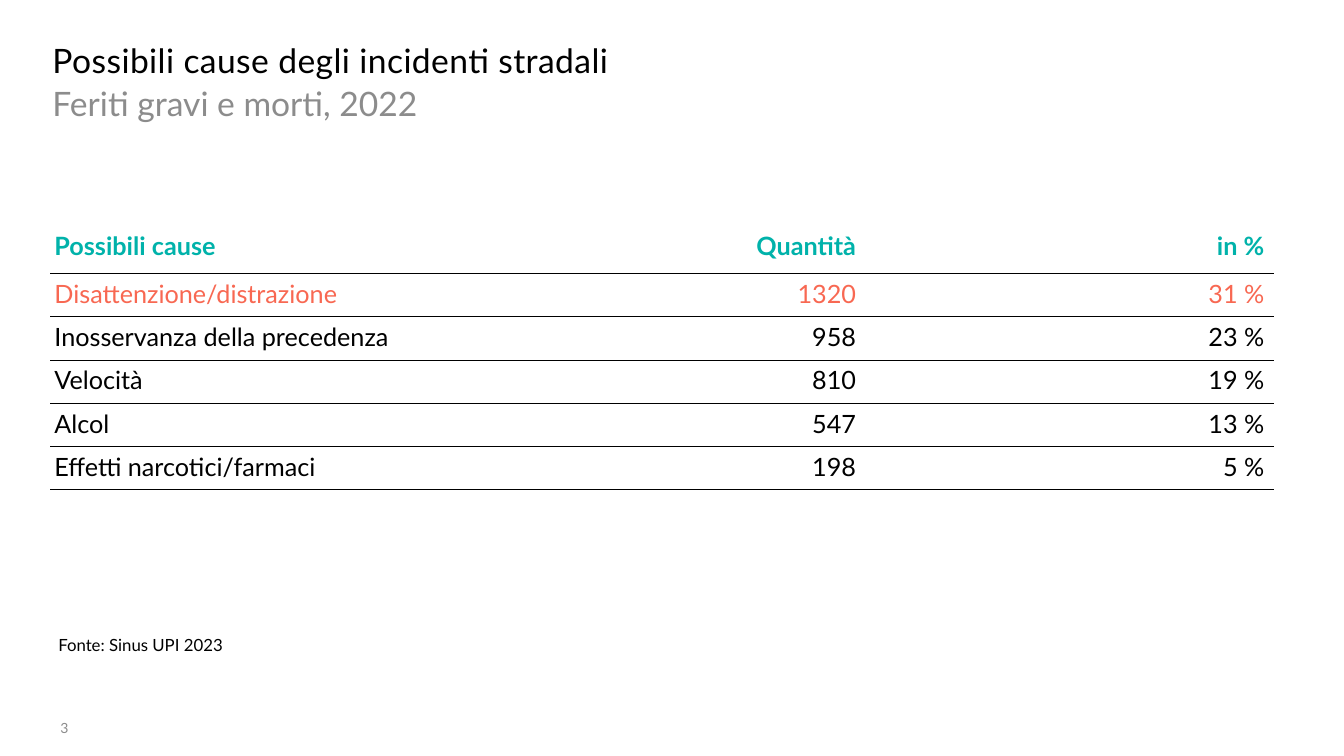
from typing import NamedTuple

from lxml.etree import SubElement
from pptx import Presentation
from pptx.dml.color import RGBColor
from pptx.enum.text import MSO_ANCHOR, PP_ALIGN
from pptx.oxml.ns import qn
from pptx.util import Inches, Pt

COLORS = {"black": "000000", "gray": "8C8C8C", "teal": "00B2AA", "coral": "F86852"}
FONT = "Lato"
NO_STYLE_NO_GRID = "{2D5ABB26-0587-4C30-8999-92F81FD0307C}"
COLUMN_WIDTHS = (6.43, 1.66, 4.05)
HEADER_HEIGHT, CAUSE_HEIGHT = 0.47, 0.43


class Label(NamedTuple):
    text: str
    left: float
    top: float
    width: float
    height: float
    size: int
    color: str
    inset: tuple[float, float] = (0, 0)
    line_spacing: float = 1.0
    space_after: int = 0
    tracking: int = 0


class Row(NamedTuple):
    values: tuple[str, str, str]
    color: str = "black"
    bold: bool = False
    height: float = CAUSE_HEIGHT
    rule: float = 0.5


LABELS = (
    Label("Possibili cause degli incidenti stradali", 0.52, 0.4, 12.28, 0.35, 24, "black",
          tracking=30),
    Label("Feriti gravi e morti, 2022", 0.52, 0.8, 12.28, 0.39, 24, "gray",
          line_spacing=1.05, space_after=12),
    Label("Fonte: Sinus UPI 2023", 0.48, 6.25, 12.43, 0.3, 12, "black",
          inset=(0.1, 0.05), space_after=6),
    Label("3", 0.6, 7.14, 0.89, 0.18, 10, "gray"),
)

ROWS = (
    Row(("Possibili cause", "Quantità", "in %"), "teal", True, HEADER_HEIGHT),
    Row(("Disattenzione/distrazione", "1320", "31 %"), "coral"),
    Row(("Inosservanza della precedenza", "958", "23 %")),
    Row(("Velocità", "810", "19 %")),
    Row(("Alcol", "547", "13 %")),
    Row(("Effetti narcotici/farmaci", "198", "5 %"), rule=1),
    Row(("", "", ""), rule=0),
)


def style_font(paragraph, size: int, color: str, bold: bool = False) -> None:
    font = paragraph.font
    font.name, font.size, font.bold = FONT, Pt(size), bold
    font.color.rgb = RGBColor.from_string(COLORS[color])


def add_label(slide, label: Label) -> None:
    box = slide.shapes.add_textbox(Inches(label.left), Inches(label.top),
                                   Inches(label.width), Inches(label.height))
    frame = box.text_frame
    frame.word_wrap = True
    frame.margin_left = frame.margin_right = Inches(label.inset[0])
    frame.margin_top = frame.margin_bottom = Inches(label.inset[1])
    paragraph = frame.paragraphs[0]
    run = paragraph.add_run()
    run.text = label.text
    paragraph.line_spacing = label.line_spacing
    paragraph.space_after = Pt(label.space_after)
    style_font(paragraph, label.size, label.color)
    if label.tracking:
        run.font._element.set("spc", str(label.tracking))


def add_rule(cell, side: str, width: float) -> None:
    properties = cell._tc.get_or_add_tcPr()
    line = SubElement(properties, qn(f"a:{side}"), w=str(Pt(width)))
    fill = SubElement(line, qn("a:solidFill"))
    SubElement(fill, qn("a:srgbClr"), val=COLORS["black"])


def fill_cell(cell, text: str, row: Row, align: PP_ALIGN, rule_above: float) -> None:
    cell.margin_left, cell.margin_right = Inches(0.04), Inches(0.1)
    cell.margin_top = cell.margin_bottom = Inches(0.05)
    cell.vertical_anchor = MSO_ANCHOR.TOP
    cell.text = text
    paragraph = cell.text_frame.paragraphs[0]
    paragraph.alignment = align
    style_font(paragraph, 18, row.color, row.bold)
    if rule_above:
        add_rule(cell, "lnT", rule_above)
    if row.rule:
        add_rule(cell, "lnB", row.rule)
    cell.fill.background()


def add_causes_table(slide) -> None:
    table = slide.shapes.add_table(
        len(ROWS), len(COLUMN_WIDTHS), Inches(0.5), Inches(2.24),
        Inches(sum(COLUMN_WIDTHS)), Inches(sum(row.height for row in ROWS))).table
    table.first_row = table.horz_banding = False
    table._tbl.tblPr.find(qn("a:tableStyleId")).text = NO_STYLE_NO_GRID
    for column, width in zip(table.columns, COLUMN_WIDTHS):
        column.width = Inches(width)
    rule_above = 0.0
    for row_index, row in enumerate(ROWS):
        table.rows[row_index].height = Inches(row.height)
        for column_index, text in enumerate(row.values):
            align = PP_ALIGN.RIGHT if column_index else PP_ALIGN.LEFT
            fill_cell(table.cell(row_index, column_index), text, row, align, rule_above)
        rule_above = row.rule


def main() -> None:
    """Build the slide on possible causes of road accidents."""
    presentation = Presentation()
    presentation.slide_width, presentation.slide_height = Inches(13.33), Inches(7.5)
    slide = presentation.slides.add_slide(presentation.slide_layouts[6])
    for label in LABELS:
        add_label(slide, label)
    add_causes_table(slide)
    presentation.save("out.pptx")


if __name__ == "__main__":
    main()
